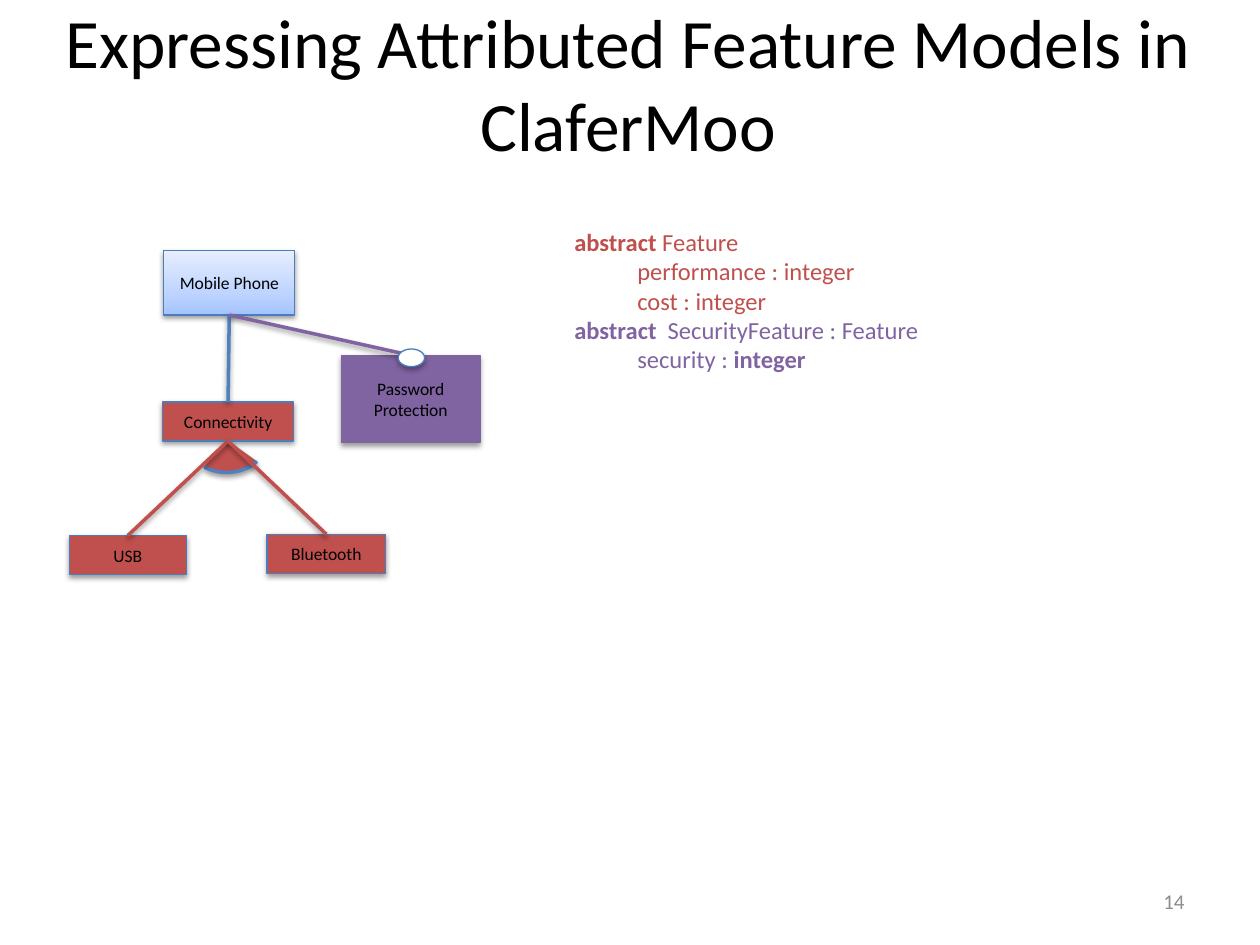
from copy import deepcopy
from lxml.etree import SubElement as Sub
from pptx import Presentation
from pptx.dml.color import RGBColor as RGB
from pptx.enum.shapes import MSO_CONNECTOR as Link, MSO_SHAPE as Kind
from pptx.enum.text import MSO_ANCHOR as Anchor, MSO_AUTO_SIZE as Fit, PP_ALIGN as Align
from pptx.oxml.ns import qn
from pptx.util import Inches, Pt

HUES = {
    "ink": "000000", "white": "FFFFFF", "gray": "8C8C8C", "red": "C0504D",
    "violet": "8064A2", "blue": "4F81BD", "edge": "4B7EBC",
    "low": "A4C4FF", "mid": "BFD4FF", "high": "E6EEFF",
}
COLS, ROWS = 100, 75
TOP, BOTTOM = 0, 2


class Board:
    face = "Calibri"

    def __init__(self, deck):
        self.cell = deck.slide_width // COLS
        self.slide = deck.slides.add_slide(deck.slide_layouts[5])
        self.shapes = self.slide.shapes

    def grid(self, *spots):
        return [round(spot * self.cell) for spot in spots]

    def hue(self, name):
        return RGB.from_string(HUES[name])

    def font(self, part, size, hue):
        part.font.name, part.font.size = self.face, Pt(size)
        part.font.color.rgb = self.hue(hue)

    def shade(self, item, alpha=38, dist=1.6):
        glow = Sub(item.element.spPr, qn("a:effectLst"))
        cast = Sub(glow, qn("a:outerShdw"), blurRad=str(Pt(3.1)), dist=str(Pt(dist)),
                   dir="5400000", rotWithShape="0")
        tint = Sub(cast, qn("a:srgbClr"), val=HUES["ink"])
        Sub(tint, qn("a:alpha"), val=str(alpha * 1000))

    def stroke(self, item, hue, width):
        item.line.color.rgb = self.hue(hue)
        item.line.width = Pt(width)

    def title(self, text, spot):
        head = self.shapes.title
        head.left, head.top, head.width, head.height = self.grid(*spot)
        frame = head.text_frame
        frame.text = text
        frame.auto_size, frame.vertical_anchor = Fit.NONE, Anchor.MIDDLE
        frame.paragraphs[0].alignment = Align.CENTER
        self.font(frame.paragraphs[0], 39.6, "ink")

    def lines(self, frame, texts, size, hue, align):
        for i, text in enumerate(texts):
            para = frame.add_paragraph() if i else frame.paragraphs[0]
            para.text, para.alignment = text, align
            self.font(para, size, hue)

    def form(self, kind, spot, fill, edge="edge", width=0.75):
        item = self.shapes.add_shape(kind, *self.grid(*spot))
        item.fill.solid()
        item.fill.fore_color.rgb = self.hue(fill)
        self.stroke(item, edge, width)
        return item

    def fade(self, item, stops):
        item.fill.gradient()
        item.fill.gradient_angle = 90
        first = item.element.spPr.find(".//" + qn("a:gs"))
        first.addnext(deepcopy(first))
        for stop, (place, hue) in zip(item.fill.gradient_stops, stops):
            stop.position, stop.color.rgb = place, self.hue(hue)

    def node(self, text, spot, fill, edge="edge", stops=None):
        item = self.form(Kind.RECTANGLE, spot, fill, edge)
        if stops:
            self.fade(item, stops)
        self.shade(item)
        item.text_frame.vertical_anchor = Anchor.MIDDLE
        self.lines(item.text_frame, text.split("\n"), 10, "ink", Align.CENTER)
        return item

    def arc(self, spot, start, end):
        item = self.form(Kind.ARC, spot, "red", "blue", 2)
        item.adjustments[0], item.adjustments[1] = start, end
        self.shade(item)

    def dot(self, spot):
        self.shade(self.form(Kind.OVAL, spot, "white"), 35, 1.8)

    def link(self, upper, lower, hue):
        line = self.shapes.add_connector(Link.STRAIGHT, 0, 0, 0, 0)
        line.begin_connect(upper, BOTTOM)
        line.end_connect(lower, TOP)
        self.stroke(line, hue, 2)
        self.shade(line)

    def box(self, spot, anchor=Anchor.TOP):
        frame = self.shapes.add_textbox(*self.grid(*spot)).text_frame
        frame.word_wrap, frame.vertical_anchor = True, anchor
        return frame

    def code(self, spot, rows):
        frame = self.box(spot)
        for i, (hue, depth, runs) in enumerate(rows):
            para = frame.add_paragraph() if i else frame.paragraphs[0]
            self.font(para, 14, hue)
            para._p.get_or_add_pPr().set("marL", str(Inches(0.5) * depth))
            for text, bold in runs:
                run = para.add_run()
                run.text, run.font.bold = text, bold

    def number(self, text, spot):
        self.lines(self.box(spot, Anchor.MIDDLE), [text], 12, "gray", Align.RIGHT)


def main():
    deck = Presentation()
    deck.slide_width, deck.slide_height = Inches(COLS / 10), Inches(ROWS / 10)
    board = Board(deck)
    board.title("Expressing Attributed Feature Models in ClaferMoo", (1.5, 3, 96.7, 7.1))
    board.code((44.6, 17.5, 55.4, 17.5), [
        ("red", 0, [("abstract", True), (" Feature", False)]),
        ("red", 1, [("performance : integer", False)]),
        ("red", 1, [("cost : integer", False)]),
        ("violet", 0, [("abstract", True), ("  SecurityFeature : Feature", False)]),
        ("violet", 1, [("security : ", False), ("integer", True)]),
    ])
    board.arc((14.8, 32.3, 6.4, 5.2), 21.34, 77.81)
    phone = board.node("Mobile Phone", (13, 19.9, 10.4, 5.1), "mid",
                       stops=[(0, "low"), (0.35, "mid"), (1, "high")])
    net = board.node("Connectivity", (12.9, 31.9, 10.4, 3.1), "red")
    lock = board.node("Password\nProtection", (27.1, 28.2, 11, 6.9), "violet", "violet")
    tooth = board.node("Bluetooth", (21.2, 42.4, 9.4, 3.1), "red")
    usb = board.node("USB", (5.5, 42.5, 9.3, 3.1), "red")
    for upper, lower, hue in [(phone, net, "blue"), (phone, lock, "violet"),
                              (net, usb, "red"), (net, tooth, "red")]:
        board.link(upper, lower, hue)
    board.dot((31.6, 27.7, 2.1, 1.4))
    board.number("14", (71.7, 69.5, 23.3, 4))
    deck.save("out.pptx")


if __name__ == "__main__":
    main()
